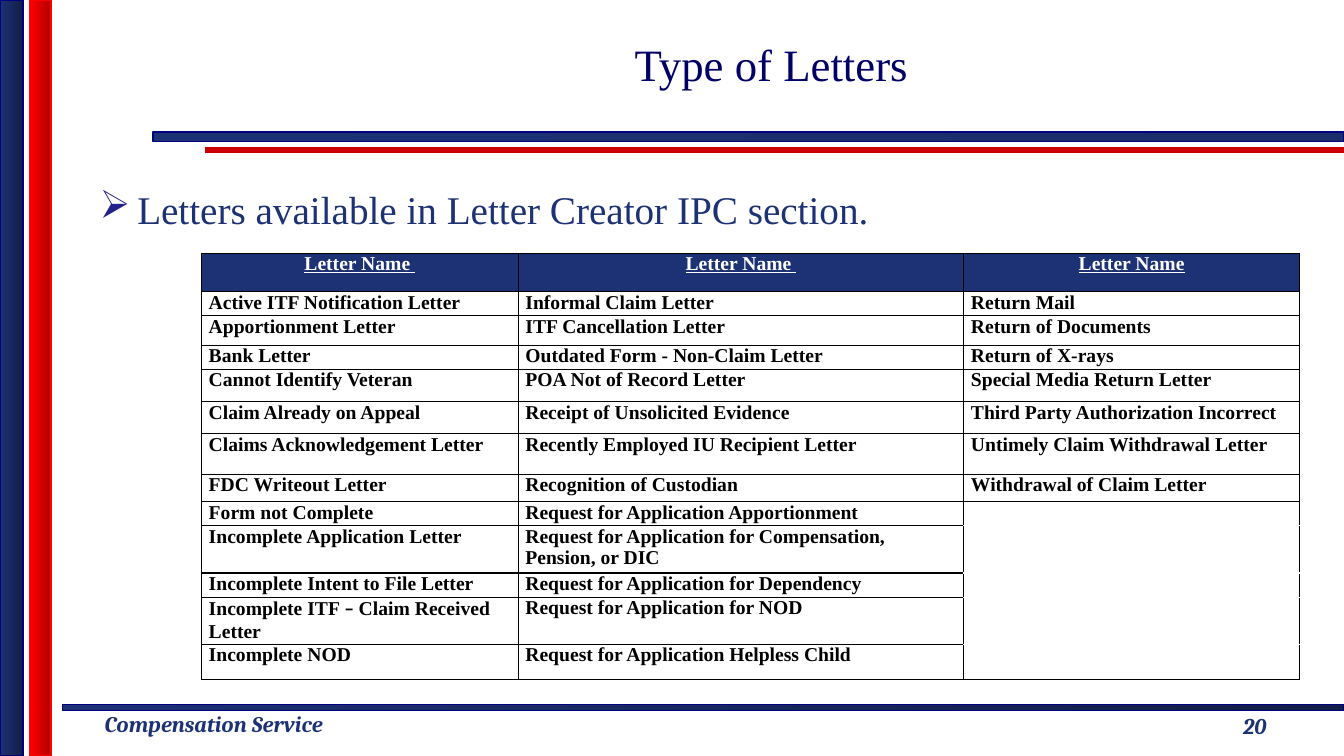
from dataclasses import dataclass

import lxml.etree
import pptx
import pptx.dml.color
import pptx.enum.shapes
import pptx.enum.text
import pptx.oxml.ns
import pptx.util

Cm = pptx.util.Cm
Pt = pptx.util.Pt
qn = pptx.oxml.ns.qn
ALIGN = pptx.enum.text.PP_ALIGN
ANCHOR = pptx.enum.text.MSO_ANCHOR


@dataclass(frozen=True)
class Theme:
    navy: str = "1D3275"
    navy_dark: str = "111E46"
    navy_soft: str = "1A2D69"
    navy_line: str = "000080"
    title: str = "000066"
    bullet: str = "22228B"
    red: str = "FF0000"
    red_dark: str = "B20000"
    red_line: str = "CC0000"
    black: str = "000000"
    white: str = "FFFFFF"
    serif: str = "Times New Roman"
    footer_font: str = "Cambria"
    dash_font: str = "Calibri"
    title_size: int = 32
    body_size: int = 28
    footer_size: int = 16
    table_size: int = 14


def rgb(color):
    return pptx.dml.color.RGBColor.from_string(color)


class SlideBuilder:
    def __init__(self, slide, theme):
        self.slide = slide
        self.theme = theme

    def style(self, run, size, color, name, bold=False, italic=False):
        font = run.font
        font.size, font.name, font.bold, font.italic = Pt(size), name, bold, italic
        font.color.rgb = rgb(color)

    def bar(self, left, top, width, height, start, end, outline):
        shape = self.slide.shapes.add_shape(
            pptx.enum.shapes.MSO_SHAPE.RECTANGLE, Cm(left), Cm(top), Cm(width), Cm(height))
        shape.shadow.inherit = False
        shape.fill.gradient()
        shape.fill.gradient_angle = 0
        for stop, color in zip(shape.fill.gradient_stops, (start, end)):
            stop.color.rgb = rgb(color)
        shape.line.color.rgb = rgb(outline)
        shape.line.width = Pt(1)

    def rule(self, left, right, y, color, width):
        line = self.slide.shapes.add_connector(
            pptx.enum.shapes.MSO_CONNECTOR.STRAIGHT, Cm(left), Cm(y), Cm(right), Cm(y))
        line.line.color.rgb = rgb(color)
        line.line.width = Pt(width)
        lxml.etree.SubElement(line._element.spPr, qn("a:effectLst"))

    def text(self, text, left, top, width, height, size, color, name,
             align=ALIGN.LEFT, anchor=ANCHOR.TOP, emphasis=False, wrap=True):
        box = self.slide.shapes.add_textbox(Cm(left), Cm(top), Cm(width), Cm(height))
        frame = box.text_frame
        frame.word_wrap = wrap
        frame.vertical_anchor = anchor
        frame.text = text
        paragraph = frame.paragraphs[0]
        paragraph.alignment = align
        self.style(paragraph.runs[0], size, color, name, emphasis, emphasis)
        return paragraph

    def bullet(self, paragraph, symbol, color, indent):
        properties = paragraph._p.get_or_add_pPr()
        properties.set("marL", str(Cm(indent)))
        properties.set("indent", str(-Cm(indent)))
        bullet_color = lxml.etree.SubElement(properties, qn("a:buClr"))
        lxml.etree.SubElement(bullet_color, qn("a:srgbClr"), val=color)
        lxml.etree.SubElement(properties, qn("a:buChar"), char=symbol)

    def borders(self, cell, sides):
        properties = cell._tc.get_or_add_tcPr()
        for position, side in enumerate(sides):
            line = lxml.etree.Element(qn(f"a:ln{side}"), w=str(Pt(1)))
            fill = lxml.etree.SubElement(line, qn("a:solidFill"))
            lxml.etree.SubElement(fill, qn("a:srgbClr"), val=self.theme.black)
            properties.insert(position, line)

    def cell(self, cell, text, header):
        theme = self.theme
        cell.margin_left = cell.margin_right = Cm(0.18)
        cell.margin_top = cell.margin_bottom = 0
        if header:
            cell.fill.solid()
            cell.fill.fore_color.rgb = rgb(theme.navy)
        else:
            cell.fill.background()
        paragraph = cell.text_frame.paragraphs[0]
        paragraph.alignment = ALIGN.CENTER if header else ALIGN.LEFT
        if not text:
            lxml.etree.SubElement(
                paragraph._p, qn("a:endParaRPr"), sz=str(theme.table_size * 100))
        dash = "– "
        for part in filter(None, text.partition(dash)):
            run = paragraph.add_run()
            run.text = part
            self.style(run, theme.table_size, theme.white if header else theme.black,
                       theme.dash_font if part == dash else theme.serif, bold=True)
            run.font.underline = header

    def table(self, rows, left, top, widths, heights):
        table = self.slide.shapes.add_table(
            len(rows), len(widths), Cm(left), Cm(top),
            Cm(sum(widths)), Cm(sum(heights))).table
        table.horz_banding = False
        for column, width in zip(table.columns, widths):
            column.width = Cm(width)
        for row, height in zip(table.rows, heights):
            row.height = Cm(height)
        for i, texts in enumerate(rows):
            for j, text in enumerate(texts):
                cell = table.cell(i, j)
                self.cell(cell, text, header=i == 0)
                top_line = "T" if text or rows[i - 1][j] else ""
                bottom_line = "B" if text or i == len(rows) - 1 else ""
                self.borders(cell, "LR" + top_line + bottom_line)


LETTERS = [
    ("Letter Name ", "Letter Name ", "Letter Name"),
    ("Active ITF Notification Letter", "Informal Claim Letter", "Return Mail"),
    ("Apportionment Letter", "ITF Cancellation Letter", "Return of Documents"),
    ("Bank Letter", "Outdated Form - Non-Claim Letter", "Return of X-rays"),
    ("Cannot Identify Veteran", "POA Not of Record Letter", "Special Media Return Letter"),
    ("Claim Already on Appeal", "Receipt of Unsolicited Evidence",
     "Third Party Authorization Incorrect"),
    ("Claims Acknowledgement Letter", "Recently Employed IU Recipient Letter",
     "Untimely Claim Withdrawal Letter"),
    ("FDC Writeout Letter", "Recognition of Custodian", "Withdrawal of Claim Letter"),
    ("Form not Complete", "Request for Application Apportionment", ""),
    ("Incomplete Application Letter",
     "Request for Application for Compensation, Pension, or DIC", ""),
    ("Incomplete Intent to File Letter", "Request for Application for Dependency", ""),
    ("Incomplete ITF – Claim Received Letter", "Request for Application for NOD", ""),
    ("Incomplete NOD", "Request for Application Helpless Child", ""),
]
COLUMN_WIDTHS = [7.98, 11.23, 8.46]
ROW_HEIGHTS = [0.97, 0.61, 0.74, 0.61, 0.81, 0.81, 1.02, 0.69, 0.61, 1.19, 0.61, 1.19, 0.89]


def main():
    presentation = pptx.Presentation()
    presentation.slide_width, presentation.slide_height = Cm(33.87), Cm(19.05)
    theme = Theme()
    builder = SlideBuilder(
        presentation.slides.add_slide(presentation.slide_layouts[6]), theme)

    builder.rule(5.16, 33.87, 3.78, theme.red_line, 4)
    builder.bar(1.57, 17.75, 32.3, 0.15, theme.navy, theme.navy_dark, theme.navy_line)
    builder.bar(3.86, 3.33, 30.01, 0.23, theme.navy, theme.navy_soft, theme.navy_line)
    builder.bar(0, 0, 0.58, 19.05, theme.navy, theme.navy_dark, theme.navy_line)
    builder.bar(0.76, 0, 0.53, 19.05, theme.red, theme.red_dark, theme.red)

    footer_style = (theme.footer_size, theme.navy, theme.footer_font)
    builder.text("Compensation Service", 2.39, 17.78, 7.16, 0.94, *footer_style,
                 emphasis=True, wrap=False)
    builder.text("20", 29.36, 17.65, 4.52, 1.27, *footer_style,
                 align=ALIGN.CENTER, anchor=ANCHOR.MIDDLE, emphasis=True)
    builder.text("Type of Letters", 5.94, 0, 27, 3.2, theme.title_size, theme.title,
                 theme.serif, align=ALIGN.CENTER, anchor=ANCHOR.MIDDLE)
    statement = builder.text("Letters available in Letter Creator IPC section.",
                             2.26, 4.55, 30.45, 11.13, theme.body_size, theme.navy, theme.serif)
    builder.bullet(statement, "➢", theme.bullet, 0.95)
    builder.table(LETTERS, 5.08, 6.38, COLUMN_WIDTHS, ROW_HEIGHTS)
    presentation.save("out.pptx")


if __name__ == "__main__":
    main()
